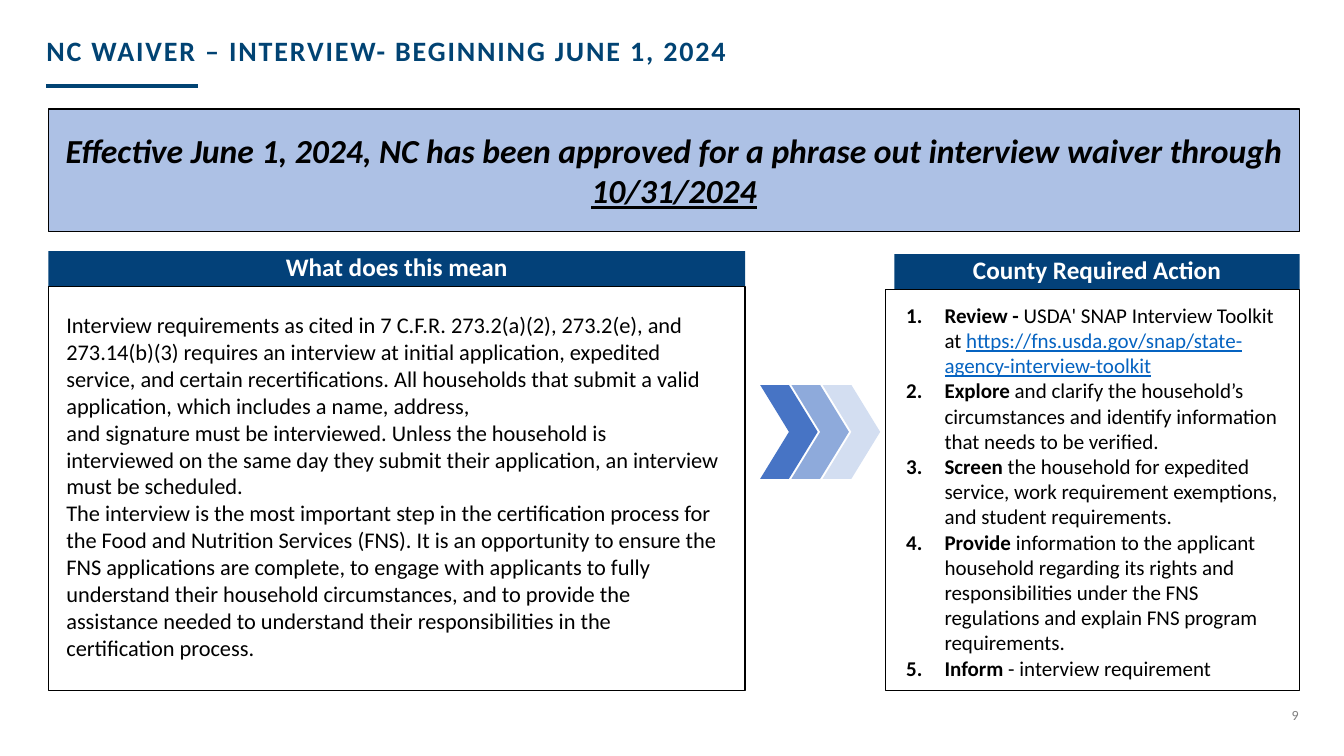
from dataclasses import dataclass

from lxml.etree import SubElement
from pptx import Presentation
from pptx.dml.color import RGBColor
from pptx.enum.shapes import MSO_CONNECTOR, MSO_SHAPE
from pptx.enum.text import MSO_ANCHOR, MSO_AUTO_SIZE, PP_ALIGN
from pptx.oxml.ns import qn
from pptx.shapes.base import BaseShape
from pptx.slide import Slide
from pptx.text.text import TextFrame
from pptx.util import Inches, Pt

NAVY, TITLE_BLUE, PALE_BLUE = "034179", "014373", "ADC1E5"
BLACK, WHITE, GREY, LINK_BLUE = "000000", "FFFFFF", "808080", "0563C1"
LEFT, RIGHT, BOTTOM = 0.48, 12.89, 6.85
HEADING_H = 0.35
NUMBER_INDENT = 0.38


@dataclass
class Run:
    text: str
    bold: bool = False
    italic: bool = False
    underline: bool = False
    color: str = BLACK


@dataclass
class Style:
    size: float
    align: PP_ALIGN = PP_ALIGN.LEFT
    anchor: MSO_ANCHOR = MSO_ANCHOR.TOP
    inset_x: float = 0.1
    inset_y: float = 0
    line_spacing: float = 1.0
    numbered: bool = False


@dataclass
class Column:
    heading: str
    heading_left: float
    left: float
    top: float
    right: float
    text_box: tuple[float, float, float, float]
    style: Style
    paragraphs: list[list[Run]]


CENTRED = {"align": PP_ALIGN.CENTER, "anchor": MSO_ANCHOR.MIDDLE}
TITLE = Style(20, anchor=MSO_ANCHOR.MIDDLE, inset_x=0, inset_y=0.05, line_spacing=0.9)
BANNER = Style(24, **CENTRED)
HEADING = Style(18, line_spacing=0.85, **CENTRED)
PAGE_NUMBER = Style(10, align=PP_ALIGN.RIGHT, anchor=MSO_ANCHOR.MIDDLE, inset_x=0)

COLUMNS = [
    Column("What does this mean", LEFT, LEFT, 2.49, 7.39, (0.56, 3.04, 6.67, 3.6),
           Style(16, inset_y=0.05), [
        [Run("Interview requirements as cited in 7 C.F.R. 273.2(a)(2), 273.2(e), and "
             "273.14(b)(3) requires an interview at initial application, expedited "
             "service, and certain recertifications. All households that submit a "
             "valid application, which includes a name, address,")],
        [Run("and signature must be interviewed. Unless the household is interviewed "
             "on the same day they submit their application, an interview must be "
             "scheduled.")],
        [Run("The interview is the most important step in the certification process "
             "for the Food and Nutrition Services (FNS). It is an opportunity to "
             "ensure the FNS applications are complete, to engage with applicants to "
             "fully understand their household circumstances, and to provide the "
             "assistance needed to understand their responsibilities in the "
             "certification process.")],
    ]),
    Column("County Required Action", 8.87, 8.78, 2.52, RIGHT, (8.89, 2.95, 3.9, 4.14),
           Style(15, inset_y=0.05, numbered=True), [
        [Run("Review - ", bold=True), Run("USDA' SNAP Interview Toolkit at "),
         Run("https://fns.usda.gov/snap/state-agency-interview-toolkit",
             underline=True, color=LINK_BLUE)],
        [Run("Explore", bold=True),
         Run(" and clarify the household’s circumstances and identify information "
             "that needs to be verified.")],
        [Run("Screen", bold=True),
         Run(" the household for expedited service, work requirement exemptions, "
             "and student requirements.")],
        [Run("Provide", bold=True),
         Run(" information to the applicant household regarding its rights and "
             "responsibilities under the FNS regulations and explain FNS program "
             "requirements.")],
        [Run("Inform ", bold=True), Run("- interview requirement")],
    ]),
]


def rgb(color: str) -> RGBColor:
    return RGBColor.from_string(color)


def write(tf: TextFrame, paragraphs: list[list[Run]], style: Style) -> None:
    frame_format = {
        "word_wrap": True, "auto_size": MSO_AUTO_SIZE.NONE,
        "vertical_anchor": style.anchor,
        "margin_left": Inches(style.inset_x), "margin_right": Inches(style.inset_x),
        "margin_top": Inches(style.inset_y), "margin_bottom": Inches(style.inset_y),
    }
    for name, value in frame_format.items():
        setattr(tf, name, value)
    for i, runs in enumerate(paragraphs):
        p = tf.add_paragraph() if i else tf.paragraphs[0]
        p.alignment, p.line_spacing = style.align, style.line_spacing
        if style.numbered:
            number_paragraph(p._p.get_or_add_pPr())
        for run in runs:
            r = p.add_run()
            r.text = run.text
            font_format = {"name": "Calibri", "size": Pt(style.size), "bold": run.bold,
                           "italic": run.italic, "underline": run.underline}
            for name, value in font_format.items():
                setattr(r.font, name, value)
            r.font.color.rgb = rgb(run.color)


def number_paragraph(pPr) -> None:
    """Give a paragraph a hanging indent and a bold automatic number."""
    pPr.set("marL", str(Inches(NUMBER_INDENT)))
    pPr.set("indent", str(-Inches(NUMBER_INDENT)))
    SubElement(pPr, qn("a:buFont"), typeface="+mj-lt")
    SubElement(pPr, qn("a:buAutoNum"), type="arabicPeriod")


def add_block(s: Slide, x: float, y: float, w: float, h: float, fill: str | None = None,
              line: str | None = None, kind: MSO_SHAPE = MSO_SHAPE.RECTANGLE) -> BaseShape:
    sp = s.shapes.add_shape(kind, Inches(x), Inches(y), Inches(w), Inches(h))
    sp.shadow.inherit = False
    if fill:
        sp.fill.solid()
        sp.fill.fore_color.rgb = rgb(fill)
    else:
        sp.fill.background()
    if line:
        sp.line.color.rgb = rgb(line)
        sp.line.width = Pt(1)
    else:
        sp.line.fill.background()
    return sp


def add_text(s: Slide, box: tuple[float, float, float, float],
             paragraphs: list[list[Run]], style: Style) -> None:
    write(s.shapes.add_textbox(*map(Inches, box)).text_frame, paragraphs, style)


def add_title(s: Slide) -> None:
    title = s.shapes.title
    for name, value in {"left": 0.46, "top": 0.2, "width": 12.41, "height": 0.65}.items():
        setattr(title, name, Inches(value))
    text = "NC WAIVER – INTERVIEW- BEGINNING JUNE 1, 2024"
    write(title.text_frame, [[Run(text, bold=True, color=TITLE_BLUE)]], TITLE)
    title.text_frame.paragraphs[0].runs[0].font._element.set("spc", "130")
    rule = s.shapes.add_connector(MSO_CONNECTOR.STRAIGHT, Inches(0.46), Inches(0.85),
                                  Inches(1.96), Inches(0.85))
    rule.line.color.rgb = rgb(TITLE_BLUE)
    rule.line.width = Pt(3)
    SubElement(rule._element.spPr, qn("a:effectLst"))


def add_column(s: Slide, col: Column) -> None:
    heading = add_block(s, col.heading_left, col.top, col.right - col.heading_left,
                        HEADING_H, NAVY)
    write(heading.text_frame, [[Run(col.heading, bold=True, color=WHITE)]], HEADING)
    panel_top = col.top + HEADING_H
    add_block(s, col.left, panel_top, col.right - col.left, BOTTOM - panel_top, line=BLACK)
    add_text(s, col.text_box, col.paragraphs, col.style)


def main() -> None:
    prs = Presentation()
    prs.slide_width, prs.slide_height = Inches(13.33), Inches(7.5)
    s = prs.slides.add_slide(prs.slide_layouts[5])
    add_title(s)
    banner = add_block(s, LEFT, 1.08, RIGHT - LEFT, 1.22, PALE_BLUE, BLACK)
    write(banner.text_frame, [[
        Run("Effective June 1, 2024, NC has been approved for a phrase out interview "
            "waiver through ", bold=True, italic=True),
        Run("10/31/2024", bold=True, italic=True, underline=True)]], BANNER)
    for col in COLUMNS:
        add_column(s, col)
    for i, color in enumerate(["4774C5", "8EAADB", "D3DEF1"]):
        add_block(s, 7.54 + 0.31 * i, 3.82, 0.57, 0.93, color, kind=MSO_SHAPE.CHEVRON)
    add_text(s, (12.42, 7.01, 0.46, 0.17), [[Run("9", color=GREY)]], PAGE_NUMBER)
    prs.save("out.pptx")


if __name__ == "__main__":
    main()
